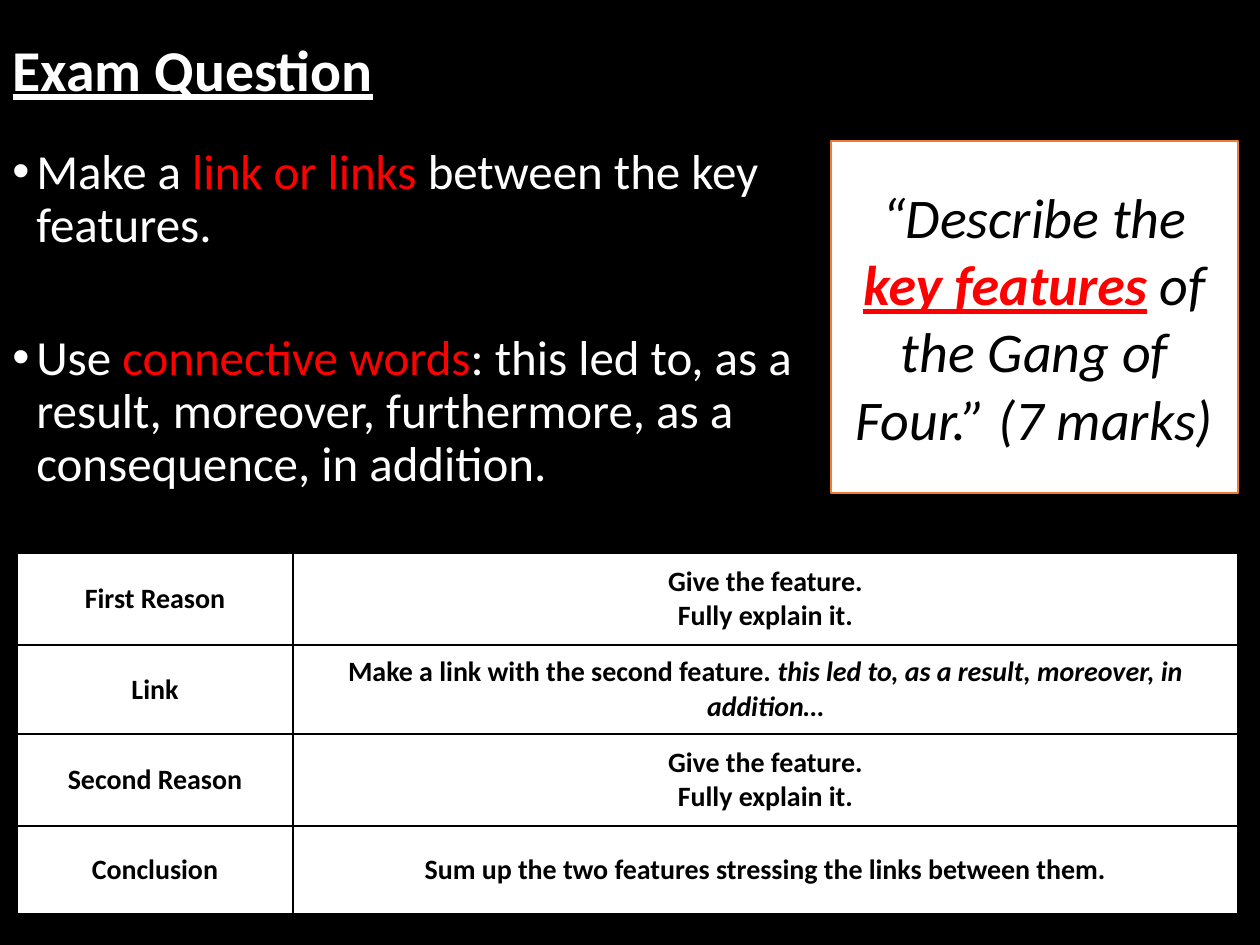
"""Build the exam question slide: title, advice bullets, question box and answer plan."""
from dataclasses import dataclass

from lxml.etree import SubElement
from pptx import Presentation
from pptx.dml.color import RGBColor as Color
from pptx.enum.shapes import MSO_SHAPE as Shape
from pptx.enum.text import MSO_ANCHOR as Anchor, MSO_AUTO_SIZE as AutoSize, PP_ALIGN as Align
from pptx.oxml.ns import qn
from pptx.util import Pt


@dataclass(frozen=True)
class Theme:
    font: str = "Calibri"
    black: Color = Color(0, 0, 0)
    white: Color = Color(255, 255, 255)
    red: Color = Color(255, 0, 0)
    orange: Color = Color(0xED, 0x7D, 0x31)
    title: int = 33
    body: int = 28
    question: int = 32
    table: int = 16


def px(*lengths):
    return [round(length * 914400 / 126) for length in lengths]


def write(paragraph, runs, size, color, align=Align.LEFT, **styles):
    paragraph.alignment = align
    font = paragraph.font
    font.name, font.size, font.color.rgb = theme.font, Pt(size), color
    for name, value in styles.items():
        setattr(font, name, value)
    for text, run_color, run_styles in runs:
        run = paragraph.add_run()
        run.text = text
        if run_color is not None:
            run.font.color.rgb = run_color
        for name in run_styles:
            setattr(run.font, name, True)


theme = Theme()
presentation = Presentation()
presentation.slide_width, presentation.slide_height = px(1260, 945)
slide = presentation.slides.add_slide(presentation.slide_layouts[5])
slide.background.fill.solid()
slide.background.fill.fore_color.rgb = theme.black

title = slide.shapes.title
title.left, title.top, title.width, title.height = px(0, 4, 1086, 137)
frame = title.text_frame
frame.auto_size = AutoSize.NONE
frame.vertical_anchor = Anchor.MIDDLE
frame.paragraphs[0].line_spacing = 0.9
write(frame.paragraphs[0], [("Exam Question", None, [])], theme.title, theme.white,
      bold=True, underline=True)

advice = [
    (7.5, [("Make a ", None, []), ("link or links ", theme.red, []),
           ("between the key features.", None, [])]),
    (46, [("Use ", None, []), ("connective words", theme.red, []),
          (": this led to, as a result, moreover, furthermore, as a consequence, "
           "in addition.", None, [])]),
]
frame = slide.shapes.add_textbox(*px(0, 141, 892, 585)).text_frame
frame.word_wrap = True
indent, = px(24)
for index, (gap, runs) in enumerate(advice):
    paragraph = frame.add_paragraph() if index else frame.paragraphs[0]
    paragraph.line_spacing = 0.9
    paragraph.space_before = Pt(gap)
    write(paragraph, runs, theme.body, theme.white)
    properties = paragraph._p.get_or_add_pPr()
    properties.set("marL", str(indent))
    properties.set("indent", str(-indent))
    bullet_font = properties.makeelement(qn("a:buFont"), {"typeface": "Arial"})
    bullet = properties.makeelement(qn("a:buChar"), {"char": "•"})
    defaults = properties.find(qn("a:defRPr"))
    defaults.addprevious(bullet_font)
    defaults.addprevious(bullet)

feature = [[("Give the feature.", None, [])], [("Fully explain it.", None, [])]]
plan = [
    ("First Reason", feature),
    ("Link", [[("Make a link with the second feature. ", None, []),
               ("this led to, as a result, moreover, in addition…", None, ["italic"])]]),
    ("Second Reason", feature),
    ("Conclusion", [[("Sum up the two features stressing the links between them.", None, [])]]),
]
table = slide.shapes.add_table(len(plan), 2, *px(17, 553, 1221, 361)).table
for column, width in zip(table.columns, px(276, 945)):
    column.width = width
for row, height in zip(table.rows, px(92, 89, 92, 88)):
    row.height = height
for row, (label, details) in zip(table.rows, plan):
    for cell, lines in zip(row.cells, ([[(label, None, [])]], details)):
        cell.fill.solid()
        cell.fill.fore_color.rgb = theme.white
        cell.vertical_anchor = Anchor.MIDDLE
        cell.margin_left, cell.margin_right, cell.margin_top, cell.margin_bottom = px(9, 9, 5, 5)
        for index, runs in enumerate(lines):
            frame = cell.text_frame
            paragraph = frame.add_paragraph() if index else frame.paragraphs[0]
            write(paragraph, runs, theme.table, theme.black, Align.CENTER, bold=True)
        properties = cell._tc.get_or_add_tcPr()
        for position, side in enumerate(("lnL", "lnR", "lnT", "lnB")):
            border = properties.makeelement(qn(f"a:{side}"), {"w": str(Pt(1))})
            fill = SubElement(border, qn("a:solidFill"))
            SubElement(fill, qn("a:srgbClr"), val=str(theme.black))
            properties.insert(position, border)

question = slide.shapes.add_shape(Shape.RECTANGLE, *px(831, 141, 407, 352))
question.shadow.inherit = False
question.fill.solid()
question.fill.fore_color.rgb = theme.white
question.line.color.rgb = theme.orange
question.line.width = Pt(1)
frame = question.text_frame
frame.word_wrap = True
frame.vertical_anchor = Anchor.MIDDLE
write(frame.paragraphs[0],
      [("“Describe the ", None, []), ("key features", theme.red, ["bold", "underline"]),
       (" of the Gang of Four.” (7 marks)", None, [])],
      theme.question, theme.black, Align.CENTER, italic=True)

presentation.save("out.pptx")
